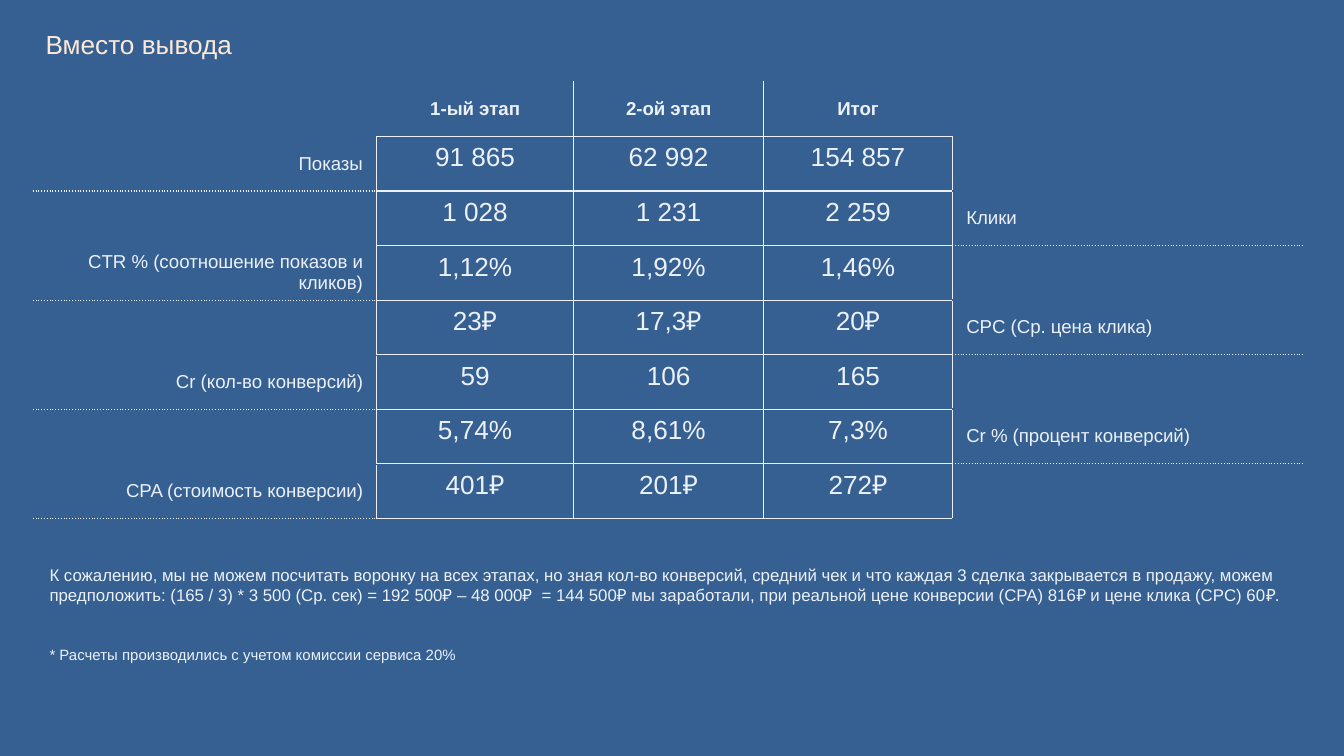
from lxml.etree import SubElement as Sub
from pptx import Presentation
from pptx.dml.color import RGBColor
from pptx.enum.text import MSO_ANCHOR as Anchor, PP_ALIGN as Align
from pptx.oxml.ns import qn
from pptx.util import Inches, Pt

BLUE = RGBColor(0x36, 0x60, 0x92)
PALE = RGBColor(0xEC, 0xF1, 0xF8)
PEACH = RGBColor(0xFD, 0xE9, 0xD8)

TITLE = "Вместо вывода"
ROWS = [
    ("", "1-ый этап", "2-ой этап", "Итог", ""),
    ("Показы", "91 865", "62 992", "154 857", ""),
    ("", "1 028", "1 231", "2 259", "Клики"),
    ("CTR % (соотношение показов и кликов)", "1,12%", "1,92%", "1,46%", ""),
    ("", "23₽", "17,3₽", "20₽", "CPC (Ср. цена клика)"),
    ("Cr (кол-во конверсий)", "59", "106", "165", ""),
    ("", "5,74%", "8,61%", "7,3%", "Cr % (процент конверсий)"),
    ("CPA (стоимость конверсии)", "401₽", "201₽", "272₽", ""),
]
NOTES = [
    ("К сожалению, мы не можем посчитать воронку на всех этапах, но зная "
     "кол-во конверсий, средний чек и что каждая 3 сделка закрывается в "
     "продажу, можем предположить: (165 / 3) * 3 500 (Ср. сек) = 192 500₽ – "
     "48 000₽  = 144 500₽ мы заработали, при реальной цене конверсии (CPA) "
     "816₽ и цене клика (CPC) 60₽.", 9, 0),
    ("* Расчеты производились с учетом комиссии сервиса 20%", 8, 22),
]
WIDTHS = [2.55, 1.47, 1.41, 1.41, 2.61]
ALIGNS = [Align.RIGHT] + [Align.CENTER] * 3 + [Align.LEFT]
HIGH = 3.25 / len(ROWS)
LAST = len(WIDTHS) - 1


def style(par, size, color=PALE, bold=False):
    for run in par.runs:
        font = run.font
        font.name, font.size, font.bold = "Arial", Pt(size), bold
        font.color.rgb = color


def box(slide, left, top, width, height):
    frame = slide.shapes.add_textbox(*map(Inches, (left, top, width, height))).text_frame
    frame.word_wrap = True
    return frame


def side(row, edge):
    inner = 0 < edge <= LAST if row else 1 < edge < LAST
    return "solid" if inner else None


def level(edge, col):
    if edge == 0:
        return None
    if 0 < col < LAST:
        return "solid"
    return "sysDot" if ROWS[edge - 1][col] else None


def border(cell, tag, dash):
    props = cell._tc.get_or_add_tcPr()
    line = Sub(props, qn("a:" + tag), w=str(Pt(0.75 if dash else 1)))
    fill = Sub(line, qn("a:solidFill"))
    Sub(fill, qn("a:srgbClr"), val=str(PALE if dash else BLUE))
    Sub(line, qn("a:prstDash"), val=dash or "solid")


def paint(cell, row, col):
    border(cell, "lnL", side(row, col))
    border(cell, "lnR", side(row, col + 1))
    border(cell, "lnT", level(row, col))
    border(cell, "lnB", level(row + 1, col))
    cell.fill.solid()
    cell.fill.fore_color.rgb = BLUE
    value = row > 0 and 0 < col < LAST
    cell.vertical_anchor = Anchor.TOP if value else Anchor.MIDDLE
    if not value:
        cell.margin_top = cell.margin_bottom = Inches(0.03)
    cell.text = ROWS[row][col]
    par = cell.text_frame.paragraphs[0]
    par.alignment = ALIGNS[col]
    style(par, 14 if value else 10, bold=row == 0)


def main():
    deck = Presentation()
    deck.slide_width = Inches(10)
    deck.slide_height = deck.slide_width * 9 // 16
    slide = deck.slides.add_slide(deck.slide_layouts[6])
    slide.background.fill.solid()
    slide.background.fill.fore_color.rgb = BLUE
    wide = sum(WIDTHS)

    head = box(slide, 0.24, 0.14, wide, 0.38)
    head.vertical_anchor = Anchor.MIDDLE
    head.text = TITLE
    style(head.paragraphs[0], 14, PEACH)

    count = len(ROWS)
    grid = slide.shapes.add_table(count, LAST + 1, Inches(0.25), Inches(0.61),
                                  Inches(wide), Inches(HIGH * count)).table
    grid.first_row = grid.horz_banding = False
    for col, width in enumerate(WIDTHS):
        grid.columns[col].width = Inches(width)
    for row in range(count):
        grid.rows[row].height = Inches(HIGH)
        for col in range(LAST + 1):
            paint(grid.cell(row, col), row, col)

    foot = box(slide, 0.27, 4.15, wide, 0.84)
    for i, (text, size, gap) in enumerate(NOTES):
        par = foot.add_paragraph() if i else foot.paragraphs[0]
        par.text = text
        if gap:
            par.space_before = Pt(gap)
        style(par, size)

    deck.save("out.pptx")


if __name__ == "__main__":
    main()
